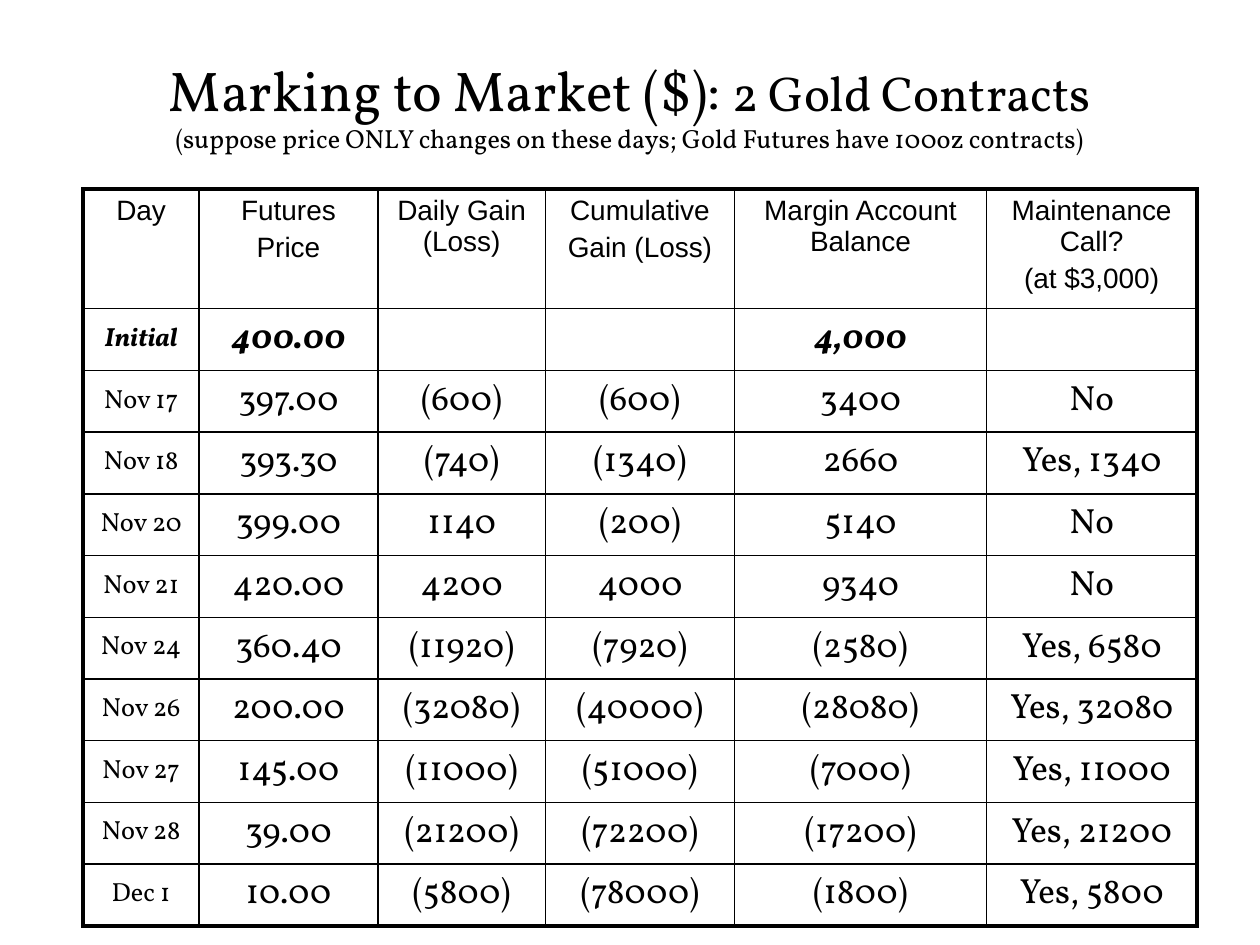
from pptx import Presentation
from pptx.dml.color import RGBColor
from pptx.enum.text import MSO_ANCHOR as Anchor, PP_ALIGN as Align
from pptx.oxml.ns import qn
from pptx.util import Inches, Pt
from lxml.etree import SubElement

TITLE = [("Marking to Market ($): ", 32), ("2 Gold Contracts", 28)]
ASSUMPTION = ("(suppose price ONLY changes on these days; "
              "Gold Futures have 100oz contracts)", 15)
HEADINGS = ["Day", "Futures\nPrice", "Daily Gain (Loss)", "Cumulative\nGain (Loss)",
            "Margin Account Balance", "Maintenance Call?\n(at $3,000)"]
DAYS = [
    ("Initial", "400.00", "", "", "4,000", ""),
    ("Nov 17", "397.00", "(600)", "(600)", "3400", "No"),
    ("Nov 18", "393.30", "(740)", "(1340)", "2660", "Yes, 1340"),
    ("Nov 20", "399.00", "1140", "(200)", "5140", "No"),
    ("Nov 21", "420.00", "4200", "4000", "9340", "No"),
    ("Nov 24", "360.40", "(11920)", "(7920)", "(2580)", "Yes, 6580"),
    ("Nov 26", "200.00", "(32080)", "(40000)", "(28080)", "Yes, 32080"),
    ("Nov 27", "145.00", "(11000)", "(51000)", "(7000)", "Yes, 11000"),
    ("Nov 28", "39.00", "(21200)", "(72200)", "(17200)", "Yes, 21200"),
    ("Dec 1", "10.00", "(5800)", "(78000)", "(1800)", "Yes, 5800"),
]
COLUMN_WIDTHS = [0.92, 1.42, 1.33, 1.5, 2, 1.67]
HEADING_HEIGHT, DAY_HEIGHT = 0.95, 0.49
TABLE_LEFT, TABLE_TOP = 0.66, 1.5

THEME = {
    "ink": "000000", "serif": "Vollkorn", "sans": "Arial",
    "heading": 16, "day": 15, "amount": 20,
    "inner": 1, "outer": 2.25, "space_before": 20,
}


def style_font(font, **formats):
    """Apply the ink colour and the given font attributes."""
    font.color.rgb = RGBColor.from_string(THEME["ink"])
    for attribute, value in formats.items():
        setattr(font, attribute, value)


def add_title(slide):
    """Write the title and, after a line break, the assumption."""
    box = slide.shapes.add_textbox(*map(Inches, (0.75, 0.33, 8.5, 1)))
    frame = box.text_frame
    frame.word_wrap = True
    frame.vertical_anchor = Anchor.MIDDLE
    paragraph = frame.paragraphs[0]
    paragraph.alignment = Align.CENTER
    for words, size in [*TITLE, ASSUMPTION]:
        if words == ASSUMPTION[0]:
            paragraph.add_line_break()
        run = paragraph.add_run()
        run.text = words
        style_font(run.font, name=THEME["serif"], size=Pt(size))


def set_borders(cell, outer_sides):
    """Rule all four sides, heavier on those at the table's edge."""
    properties = cell._tc.get_or_add_tcPr()
    for side in "LRTB":
        width = THEME["outer" if side in outer_sides else "inner"]
        line = SubElement(properties, qn(f"a:ln{side}"), w=str(Pt(width)))
        fill = SubElement(line, qn("a:solidFill"))
        SubElement(fill, qn("a:srgbClr"), val=THEME["ink"])


def write_cell(cell, words, anchor, formats):
    """Fill a cell with centred paragraphs spaced by a share of a line."""
    cell.text = words
    cell.vertical_anchor = anchor
    for paragraph in cell.text_frame.paragraphs:
        paragraph.alignment = Align.CENTER
        before = SubElement(paragraph._p.get_or_add_pPr(), qn("a:spcBef"))
        SubElement(before, qn("a:spcPct"), val=str(THEME["space_before"] * 1000))
        for run in paragraph.runs:
            style_font(run.font, **formats)


def cell_formats(row, column):
    """Return the font formats for a position in the table."""
    if row == 0:
        return {"name": THEME["sans"], "size": Pt(THEME["heading"]), "bold": False}
    size = THEME["day" if column == 0 else "amount"]
    initial = row == 1
    return {"name": THEME["serif"], "size": Pt(size), "bold": initial, "italic": initial}


def add_margin_table(slide):
    """Build the table of daily prices, gains and margin calls."""
    rows = [HEADINGS, *DAYS]
    heights = [HEADING_HEIGHT] + [DAY_HEIGHT] * len(DAYS)
    place = (TABLE_LEFT, TABLE_TOP, sum(COLUMN_WIDTHS), sum(heights))
    table = slide.shapes.add_table(len(rows), len(HEADINGS), *map(Inches, place)).table
    table.first_row = table.horz_banding = False
    for column, width in zip(table.columns, COLUMN_WIDTHS):
        column.width = Inches(width)
    for row, height in zip(table.rows, heights):
        row.height = Inches(height)
    last_row, last_column = len(rows) - 1, len(HEADINGS) - 1
    for r, values in enumerate(rows):
        for c, words in enumerate(values):
            cell = table.cell(r, c)
            edges = {"L": c == 0, "R": c == last_column, "T": r == 0, "B": r == last_row}
            write_cell(cell, words, Anchor.MIDDLE if r else Anchor.TOP, cell_formats(r, c))
            set_borders(cell, [side for side, at_edge in edges.items() if at_edge])
            cell.fill.background()


deck = Presentation()
deck.slide_width, deck.slide_height = Inches(10), Inches(7.5)
margin_slide = deck.slides.add_slide(deck.slide_layouts[6])
add_title(margin_slide)
add_margin_table(margin_slide)
deck.save("out.pptx")
